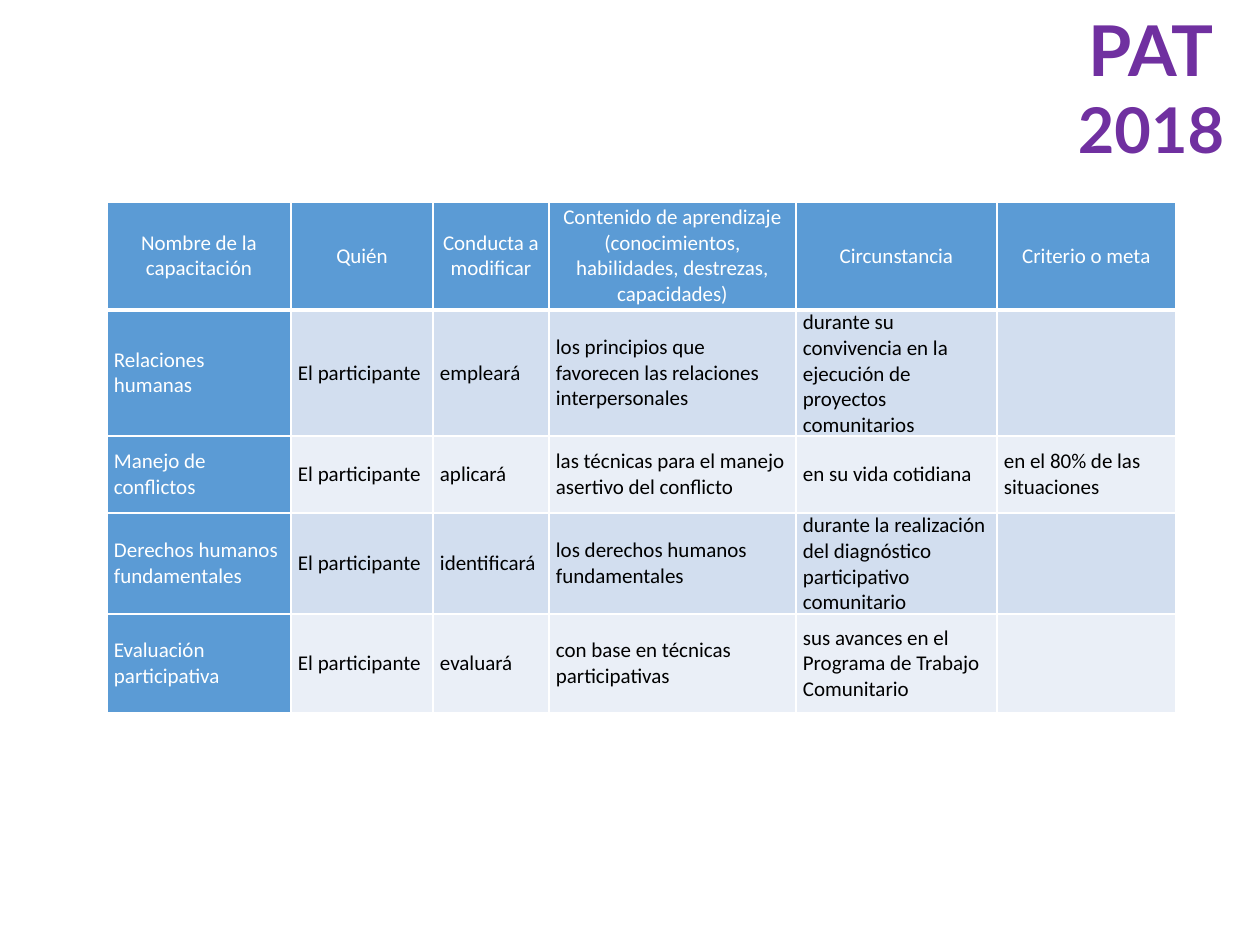
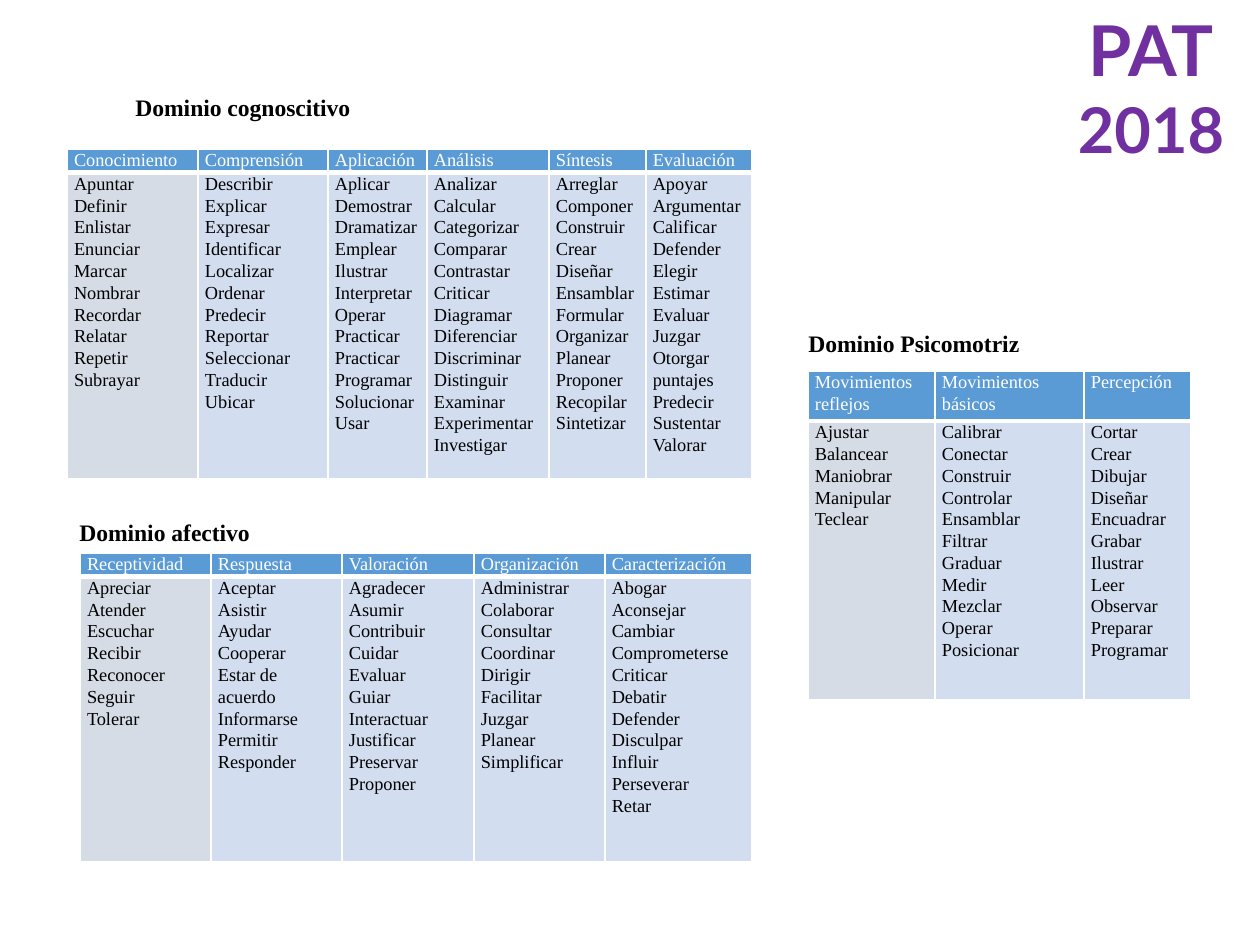
from dataclasses import dataclass
from itertools import accumulate

from lxml import etree
from pptx import Presentation
from pptx import util as u
from pptx.dml.color import RGBColor
from pptx.enum import text
from pptx.oxml import ns

EMU_PER_PX = 914400 / 126
SLIDE_SIZE = (1260, 945)
CELL_MARGIN = 7


@dataclass(frozen=True)
class Theme:
    purple: str = "7030A0"
    white: str = "FFFFFF"
    black: str = "000000"
    blue: str = "5B9BD5"
    band_dark: str = "D2DEEF"
    band_light: str = "EAEFF7"
    gray: str = "D6DCE5"
    brand_font: str = "Lato"
    plan_font: str = "Calibri"
    verb_font: str = "Times New Roman"
    brand_size: float = 40
    year_size: float = 36
    heading_size: float = 13.5
    plan_size: float = 12
    verb_size: float = 10.5
    border_width: float = 1
    header_border_width: float = 3


THEME = Theme()

TRAINING_COLUMNS = (184, 142, 116, 247, 201, 179)
TRAINING_ROWS = (108, 126, 77, 101, 99)
TRAINING_PLAN = [
    ["Nombre de la capacitación", "Quién", "Conducta a modificar",
     "Contenido de aprendizaje (conocimientos, habilidades, destrezas, capacidades)",
     "Circunstancia", "Criterio o meta"],
    ["Relaciones humanas", "El participante", "empleará",
     "los principios que favorecen las relaciones interpersonales",
     "durante su convivencia en la ejecución de proyectos comunitarios", ""],
    ["Manejo de conflictos", "El participante", "aplicará",
     "las técnicas para el manejo asertivo del conflicto",
     "en su vida cotidiana", "en el 80% de las situaciones"],
    ["Derechos humanos fundamentales", "El participante", "identificará",
     "los derechos humanos fundamentales",
     "durante la realización del diagnóstico participativo comunitario", ""],
    ["Evaluación participativa", "El participante", "evaluará",
     "con base en técnicas participativas",
     "sus avances en el Programa de Trabajo Comunitario", ""],
]

COGNITIVE_VERBS = {
    "Conocimiento": "Apuntar, Definir, Enlistar, Enunciar, Marcar, Nombrar, Recordar, "
                    "Relatar, Repetir, Subrayar",
    "Comprensión": "Describir, Explicar, Expresar, Identificar, Localizar, Ordenar, "
                   "Predecir, Reportar, Seleccionar, Traducir, Ubicar",
    "Aplicación": "Aplicar, Demostrar, Dramatizar, Emplear, Ilustrar, Interpretar, "
                  "Operar, Practicar, Practicar, Programar, Solucionar, Usar",
    "Análisis": "Analizar, Calcular, Categorizar, Comparar, Contrastar, Criticar, "
                "Diagramar, Diferenciar, Discriminar, Distinguir, Examinar, "
                "Experimentar, Investigar",
    "Síntesis": "Arreglar, Componer, Construir, Crear, Diseñar, Ensamblar, Formular, "
                "Organizar, Planear, Proponer, Recopilar, Sintetizar",
    "Evaluación": "Apoyar, Argumentar, Calificar, Defender, Elegir, Estimar, Evaluar, "
                  "Juzgar, Otorgar, puntajes, Predecir, Sustentar, Valorar",
}
AFFECTIVE_VERBS = {
    "Receptividad": "Apreciar, Atender, Escuchar, Recibir, Reconocer, Seguir, Tolerar",
    "Respuesta": "Aceptar, Asistir, Ayudar, Cooperar, Estar de acuerdo, Informarse, "
                 "Permitir, Responder",
    "Valoración": "Agradecer, Asumir, Contribuir, Cuidar, Evaluar, Guiar, Interactuar, "
                  "Justificar, Preservar, Proponer",
    "Organización": "Administrar, Colaborar, Consultar, Coordinar, Dirigir, Facilitar, "
                    "Juzgar, Planear, Simplificar",
    "Caracterización": "Abogar, Aconsejar, Cambiar, Comprometerse, Criticar, Debatir, "
                       "Defender, Disculpar, Influir, Perseverar, Retar",
}
PSYCHOMOTOR_VERBS = {
    "Movimientos reflejos": "Ajustar, Balancear, Maniobrar, Manipular, Teclear",
    "Movimientos básicos": "Calibrar, Conectar, Construir, Controlar, Ensamblar, Filtrar, "
                           "Graduar, Medir, Mezclar, Operar, Posicionar",
    "Percepción": "Cortar, Crear, Dibujar, Diseñar, Encuadrar, Grabar, Ilustrar, Leer, "
                  "Observar, Preparar, Programar",
}

# heading, heading box, table corner, column widths, row heights, verbs
DOMAINS = [
    ("Dominio cognoscitivo", (123, 87, 281, 42), (67, 149),
     (131, 130, 99, 122, 97, 106), (23, 305), COGNITIVE_VERBS),
    ("Dominio afectivo", (67, 512, 215, 42), (80, 553),
     (131, 131, 132, 131, 147), (23, 285), AFFECTIVE_VERBS),
    ("Dominio Psicomotriz", (796, 323, 324, 42), (808, 371),
     (127, 149, 107), (50, 279), PSYCHOMOTOR_VERBS),
]


def px(length):
    return u.Emu(round(length * EMU_PER_PX))


def apply_format(target, values):
    for name, value in values.items():
        setattr(target, name, value)


def add_run(paragraph, words, font, size, color, bold=False):
    run = paragraph.add_run()
    run.text = words
    apply_format(run.font, {"name": font, "size": u.Pt(size), "bold": bold})
    run.font.color.rgb = RGBColor.from_string(color)


def add_text_box(slide, box, runs, alignment=text.PP_ALIGN.LEFT):
    """Place one paragraph; each run is (words, font, size, color, bold)."""
    frame = slide.shapes.add_textbox(*map(px, box)).text_frame
    apply_format(frame, {"word_wrap": True,
                         "auto_size": text.MSO_AUTO_SIZE.SHAPE_TO_FIT_TEXT})
    paragraph = frame.paragraphs[0]
    paragraph.alignment = alignment
    for run in runs:
        add_run(paragraph, *run)


def add_plan_slide(presentation):
    """Add a blank slide with the plan name in its top right corner."""
    slide = presentation.slides.add_slide(presentation.slide_layouts[6])
    add_text_box(slide, (1042, 0, 218, 174),
                 [("PAT", THEME.brand_font, THEME.brand_size, THEME.purple, True),
                  (" 2018", THEME.brand_font, THEME.year_size, THEME.purple, True)],
                 text.PP_ALIGN.CENTER)
    return slide


def add_borders(cell, bottom_width):
    properties = cell._tc.get_or_add_tcPr()
    for side in "LRTB":
        width = bottom_width if side == "B" else THEME.border_width
        line = etree.SubElement(properties, ns.qn(f"a:ln{side}"), w=str(u.Pt(width)))
        fill = etree.SubElement(line, ns.qn("a:solidFill"))
        etree.SubElement(fill, ns.qn("a:srgbClr"), val=THEME.white)


def fill_cell(cell, lines, fill, color, font, size, anchor, is_header, paragraph_format):
    apply_format(cell, {"margin_left": px(CELL_MARGIN), "margin_right": px(CELL_MARGIN),
                        "margin_top": 0, "margin_bottom": 0, "vertical_anchor": anchor})
    add_borders(cell, THEME.header_border_width if is_header else THEME.border_width)
    cell.fill.solid()
    cell.fill.fore_color.rgb = RGBColor.from_string(fill)
    for index, words in enumerate(lines):
        frame = cell.text_frame
        paragraph = frame.add_paragraph() if index else frame.paragraphs[0]
        apply_format(paragraph, paragraph_format)
        if words:
            add_run(paragraph, words, font, size, color)


def add_grid(slide, corner, widths, heights):
    frame = slide.shapes.add_table(len(heights), len(widths), *map(
        px, (*corner, sum(widths), sum(heights))))
    table = frame.table
    table.horz_banding = False
    for items, name, lengths in ((table.columns, "width", widths),
                                 (table.rows, "height", heights)):
        edges = [px(edge) for edge in accumulate(lengths, initial=0)]
        for item, start, end in zip(items, edges, edges[1:]):
            setattr(item, name, u.Emu(end - start))
    return table


def add_training_table(slide):
    table = add_grid(slide, (107, 202), TRAINING_COLUMNS, TRAINING_ROWS)
    for row, entries in enumerate(TRAINING_PLAN):
        band = THEME.band_dark if row % 2 else THEME.band_light
        alignment = text.PP_ALIGN.LEFT if row else text.PP_ALIGN.CENTER
        for column, words in enumerate(entries):
            is_label = row == 0 or column == 0
            fill_cell(table.cell(row, column), [words],
                      THEME.blue if is_label else band,
                      THEME.white if is_label else THEME.black,
                      THEME.plan_font, THEME.plan_size, text.MSO_ANCHOR.MIDDLE,
                      row == 0, {"alignment": alignment})


def add_verb_table(slide, corner, widths, heights, verbs):
    """Each column holds a category and the verbs that express it."""
    table = add_grid(slide, corner, widths, heights)
    for column, (category, verb_list) in enumerate(verbs.items()):
        body_fill = THEME.band_dark if column else THEME.gray
        cells = [([category], THEME.blue, THEME.white),
                 (verb_list.split(", "), body_fill, THEME.black)]
        for row, (lines, fill, color) in enumerate(cells):
            fill_cell(table.cell(row, column), lines, fill, color,
                      THEME.verb_font, THEME.verb_size, text.MSO_ANCHOR.TOP,
                      row == 0, {"line_spacing": 1.07})


def main():
    presentation = Presentation()
    presentation.slide_width, presentation.slide_height = map(px, SLIDE_SIZE)

    add_training_table(add_plan_slide(presentation))

    domains_slide = add_plan_slide(presentation)
    for heading, heading_box, corner, widths, heights, verbs in DOMAINS:
        add_verb_table(domains_slide, corner, widths, heights, verbs)
        add_text_box(domains_slide, heading_box,
                     [(heading, THEME.verb_font, THEME.heading_size, THEME.black, True)])

    presentation.save("out.pptx")


if __name__ == "__main__":
    main()
